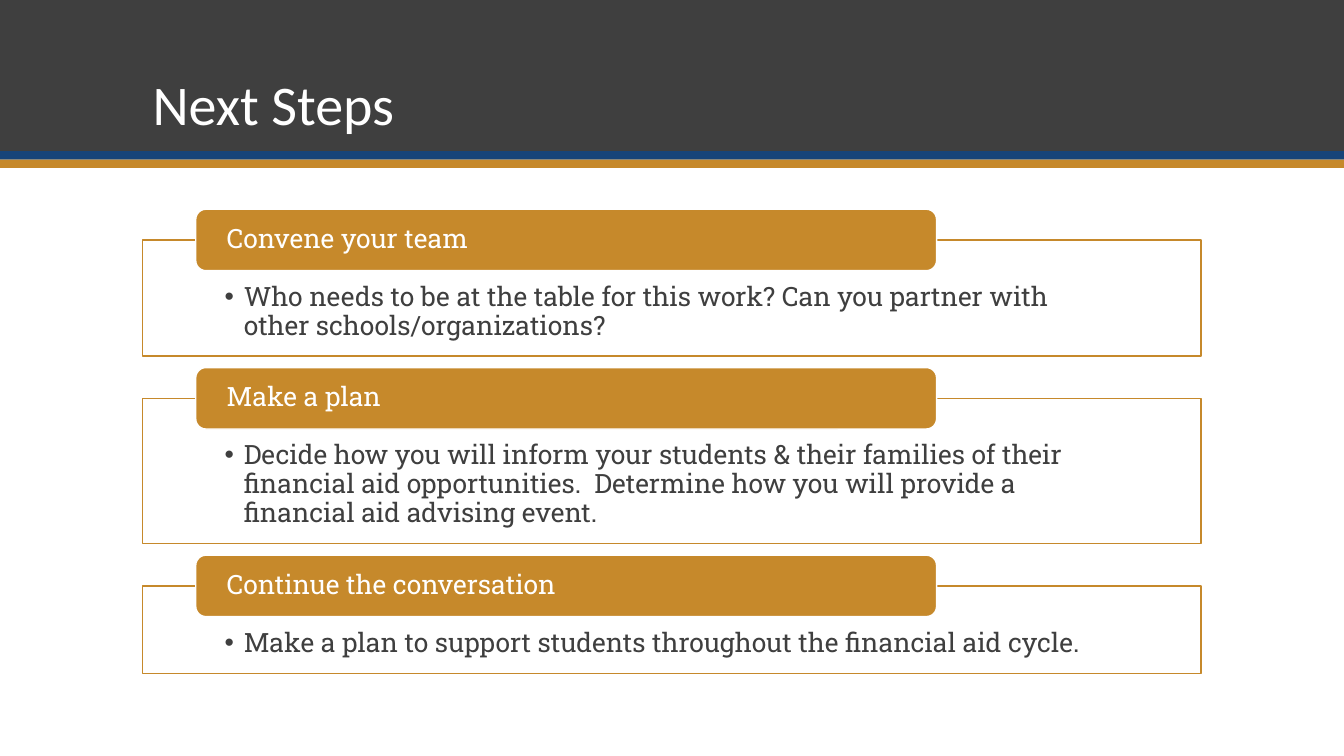
"""Build the Next Steps slide: a title band above three tabbed step boxes."""
import pptx
import pptx.dml.color
import pptx.enum.shapes
import pptx.enum.text
import pptx.oxml
import pptx.oxml.ns
import pptx.util

Pt = pptx.util.Pt
RGBColor = pptx.dml.color.RGBColor
SHAPES = pptx.enum.shapes.MSO_SHAPE
ANCHORS = pptx.enum.text.MSO_ANCHOR

CHARCOAL = RGBColor(0x3F, 0x3F, 0x3F)
NAVY = RGBColor(0x17, 0x44, 0x79)
GOLD = RGBColor(0xC6, 0x89, 0x2B)
WHITE = RGBColor(0xFF, 0xFF, 0xFF)

SLIDE_WIDTH, SLIDE_HEIGHT = 960, 540
CONTENT_LEFT, CONTENT_WIDTH = 102, 756
FIRST_BOX_TOP, BOX_GAP = 171.4, 30.3
TAB_HEIGHT = 43.9

STEPS = [
    ("Convene your team", 82.8,
     "Who needs to be at the table for this work? "
     "Can you partner with other schools/organizations?"),
    ("Make a plan", 103.7,
     "Decide how you will inform your students & their families of their "
     "financial aid opportunities.  Determine how you will provide a "
     "financial aid advising event."),
    ("Continue the conversation", 62.5,
     "Make a plan to support students throughout the financial aid cycle."),
]


def add_block(slide, kind, box, fill, line=None):
    """Add a flat filled shape, outlined if a line colour is given."""
    shape = slide.shapes.add_shape(kind, *map(Pt, box))
    shape.shadow.inherit = False
    shape.fill.solid()
    shape.fill.fore_color.rgb = fill
    if line is None:
        shape.line.fill.background()
    else:
        shape.line.color.rgb = line
        shape.line.width = Pt(1)
    return shape


def write_text(shape, text, font_name, size, color, anchor, insets):
    """Write one left-aligned paragraph into a shape and return it."""
    frame = shape.text_frame
    frame.text = text
    frame.word_wrap = True
    frame.vertical_anchor = anchor
    (frame.margin_left, frame.margin_top,
     frame.margin_right, frame.margin_bottom) = map(Pt, insets)
    paragraph = frame.paragraphs[0]
    paragraph.alignment = pptx.enum.text.PP_ALIGN.LEFT
    paragraph.line_spacing = 0.9
    font = paragraph.runs[0].font
    font.name = font_name
    font.size = Pt(size)
    font.color.rgb = color
    return paragraph


def add_bullet(paragraph, indent):
    """Give a paragraph a round bullet with a hanging indent."""
    properties = paragraph._p.get_or_add_pPr()
    properties.set("marL", str(Pt(indent)))
    properties.set("indent", str(-Pt(indent)))
    namespace = pptx.oxml.ns.nsdecls("a")
    properties.append(pptx.oxml.parse_xml(f'<a:buFont {namespace} typeface="Arial"/>'))
    properties.append(pptx.oxml.parse_xml(f'<a:buChar {namespace} char="•"/>'))


def add_header(slide, left, top, width, height):
    """Draw the dark title band with its two stripes and the title."""
    stripe = 6
    for offset, band_height, color in (
            (0, height, CHARCOAL), (height, stripe, NAVY), (height + stripe, stripe, GOLD)):
        add_block(slide, SHAPES.RECTANGLE, (left, top + offset, width, band_height), color)
    title = slide.shapes.add_textbox(
        Pt(left + CONTENT_LEFT), Pt(top + 20), Pt(CONTENT_WIDTH), Pt(height - 26.5))
    write_text(title, "Next Steps", "Calibri", 40, WHITE, ANCHORS.BOTTOM, (7.2, 3.6, 7.2, 3.6))


def add_step(slide, left, top, width, height, heading, detail):
    """Draw an outlined step box with a heading tab across its top edge."""
    body = add_block(slide, SHAPES.RECTANGLE, (left, top, width, height), WHITE, GOLD)
    paragraph = write_text(body, detail, "Roboto Slab", 19, CHARCOAL, ANCHORS.TOP,
                           (58.5, 31, 58.5, 10.8))
    add_bullet(paragraph, 13.7)
    tab_box = (left + 0.05 * width, top - TAB_HEIGHT / 2, 0.7 * width, TAB_HEIGHT)
    tab = add_block(slide, SHAPES.ROUNDED_RECTANGLE, tab_box, GOLD, WHITE)
    write_text(tab, heading, "Roboto Slab", 19, WHITE, ANCHORS.MIDDLE, (20, 0, 20, 0))


def main():
    """Build and save the presentation."""
    presentation = pptx.Presentation()
    presentation.slide_width = Pt(SLIDE_WIDTH)
    presentation.slide_height = Pt(SLIDE_HEIGHT)
    slide = presentation.slides.add_slide(presentation.slide_layouts[6])
    add_header(slide, 0, 0, SLIDE_WIDTH, 108)
    top = FIRST_BOX_TOP
    for heading, height, detail in STEPS:
        add_step(slide, CONTENT_LEFT, top, CONTENT_WIDTH, height, heading, detail)
        top += height + BOX_GAP
    presentation.save("out.pptx")


if __name__ == "__main__":
    main()
